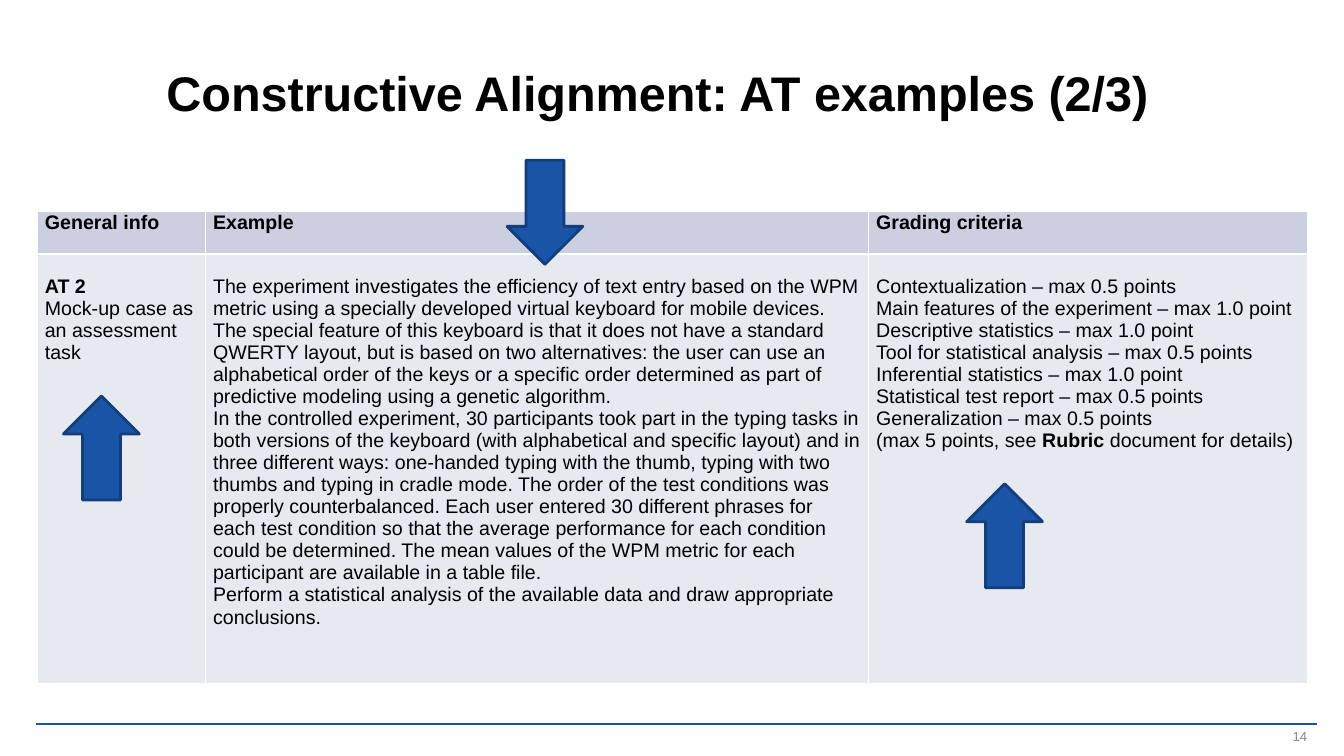
from lxml import etree
from pptx import Presentation
from pptx import util as u
from pptx.dml.color import RGBColor
from pptx.enum import shapes, text
from pptx.oxml import ns

BLUE = "1954A6"


def paint(color_format, value):
    color_format.rgb = RGBColor.from_string(value)


def add_run(paragraph, content, size, bold=False, color="000000"):
    run = paragraph.add_run()
    run.text = content
    run.font.name = "Arial"
    run.font.size = u.Pt(size)
    run.font.bold = bold
    paint(run.font.color, color)


presentation = Presentation()
presentation.slide_width = u.Cm(33.87)
presentation.slide_height = u.Cm(19.05)
slide = presentation.slides.add_slide(presentation.slide_layouts[5])

rule = slide.shapes.add_connector(
    shapes.MSO_CONNECTOR.STRAIGHT, u.Cm(0.91), u.Cm(18.25), u.Cm(33.19), u.Cm(18.25))
paint(rule.line.color, BLUE)
rule.line.width = u.Pt(1.5)
etree.SubElement(rule._element.spPr, ns.qn("a:effectLst"))

title = slide.shapes.title
title.left, title.top, title.width, title.height = u.Cm(3.94), u.Cm(0.94), u.Cm(27.97), u.Cm(2.49)
title.text_frame.vertical_anchor = text.MSO_ANCHOR.MIDDLE
title.text_frame.auto_size = text.MSO_AUTO_SIZE.NONE
paragraph = title.text_frame.paragraphs[0]
paragraph.alignment = text.PP_ALIGN.LEFT
paragraph.line_spacing = 1.18
add_run(paragraph, "Constructive Alignment: AT examples (2/3)", 34.7, True)

number_box = slide.shapes.add_textbox(u.Cm(25.32), u.Cm(18.34), u.Cm(7.62), u.Cm(0.43))
frame = number_box.text_frame
frame.word_wrap = True
frame.vertical_anchor = text.MSO_ANCHOR.MIDDLE
frame.margin_left = frame.margin_top = frame.margin_right = frame.margin_bottom = 0
frame.paragraphs[0].alignment = text.PP_ALIGN.RIGHT
add_run(frame.paragraphs[0], "14", 9.3, color="848489")

headings = ["General info", "Example", "Grading criteria"]
general_info = [[("AT 2", True)], [("Mock-up case as an assessment task", False)]]
example = [
    "The experiment investigates the efficiency of text entry based on the WPM metric using a "
    "specially developed virtual keyboard for mobile devices. The special feature of this keyboard "
    "is that it does not have a standard QWERTY layout, but is based on two alternatives: the user "
    "can use an alphabetical order of the keys or a specific order determined as part of predictive "
    "modeling using a genetic algorithm.",
    "In the controlled experiment, 30 participants took part in the typing tasks in both versions of "
    "the keyboard (with alphabetical and specific layout) and in three different ways: one-handed "
    "typing with the thumb, typing with two thumbs and typing in cradle mode. The order of the test "
    "conditions was properly counterbalanced. Each user entered 30 different phrases for each test "
    "condition so that the average performance for each condition could be determined. The mean "
    "values of the WPM metric for each participant are available in a table file.",
    "Perform a statistical analysis of the available data and draw appropriate conclusions.",
]
criteria = [
    "Contextualization – max 0.5 points",
    "Main features of the experiment – max 1.0 point",
    "Descriptive statistics – max 1.0 point",
    "Tool for statistical analysis – max 0.5 points",
    "Inferential statistics – max 1.0 point",
    "Statistical test report – max 0.5 points",
    "Generalization – max 0.5 points",
]
rubric_note = [("(max 5 points, see ", False), ("Rubric", True), (" document for details)", False)]
rows = [
    [[[(heading, True)]] for heading in headings],
    [
        general_info,
        [[(line, False)] for line in example],
        [[(line, False)] for line in criteria] + [rubric_note],
    ],
]
column_widths = [4.24, 16.71, 11.05]
row_heights = [1.07, 10.82]
row_fills = ["CBCFE0", "E7E9F0"]
top_margins = [0, 0.55]

table = slide.shapes.add_table(
    2, 3, u.Cm(0.94), u.Cm(5.33), u.Cm(sum(column_widths)), u.Cm(sum(row_heights))).table
table.first_row = False
table.horz_banding = False
for column, width in zip(table.columns, column_widths):
    column.width = u.Cm(width)
for row_index, row in enumerate(rows):
    table.rows[row_index].height = u.Cm(row_heights[row_index])
    for column_index, lines in enumerate(row):
        cell = table.cell(row_index, column_index)
        cell.margin_left = cell.margin_right = u.Cm(0.19)
        cell.margin_top = u.Cm(top_margins[row_index])
        cell.margin_bottom = 0
        cell.fill.solid()
        paint(cell.fill.fore_color, row_fills[row_index])
        properties = cell._tc.get_or_add_tcPr()
        for position, side in enumerate(["lnL", "lnR", "lnT", "lnB"]):
            border = etree.Element(ns.qn(f"a:{side}"), w=str(u.Pt(1)))
            border_fill = etree.SubElement(border, ns.qn("a:solidFill"))
            etree.SubElement(border_fill, ns.qn("a:srgbClr"), val="FFFFFF")
            properties.insert(position, border)
        for line_index, line in enumerate(lines):
            frame = cell.text_frame
            paragraph = frame.add_paragraph() if line_index else frame.paragraphs[0]
            for content, bold in line:
                add_run(paragraph, content, 14, bold)

for left, top, rotation in [(12.78, 4.04, 0), (24.36, 12.19, 180), (1.6, 9.98, 180)]:
    arrow = slide.shapes.add_shape(
        shapes.MSO_SHAPE.DOWN_ARROW, u.Cm(left), u.Cm(top), u.Cm(1.91), u.Cm(2.62))
    arrow.rotation = rotation
    arrow.shadow.inherit = False
    arrow.fill.solid()
    paint(arrow.fill.fore_color, BLUE)
    paint(arrow.line.color, "123E7B")
    arrow.line.width = u.Pt(2)

presentation.save("out.pptx")
